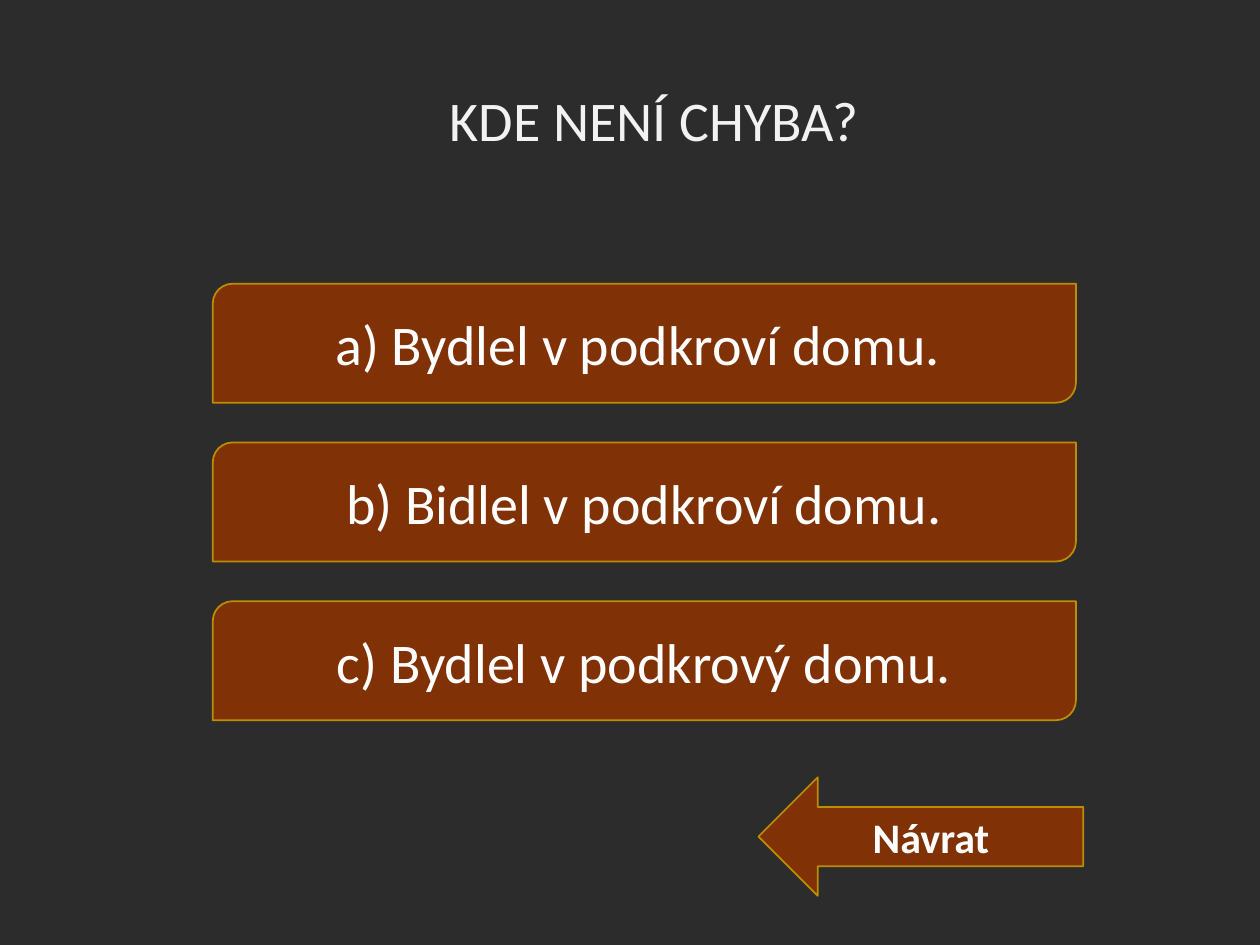
from pptx import Presentation
from pptx.dml.color import RGBColor
from pptx.enum.shapes import MSO_SHAPE as Shape
from pptx.enum.text import MSO_ANCHOR as Anchor, PP_ALIGN as Align
from pptx.util import Cm, Pt

BACKGROUND = RGBColor(0x2C, 0x2C, 0x2C)
TITLE = RGBColor(0xF2, 0xF2, 0xF2)
WHITE = RGBColor(0xFF, 0xFF, 0xFF)
BROWN = RGBColor(0x80, 0x31, 0x06)
GOLD = RGBColor(0xBD, 0x8E, 0x00)
FONT = "Calibri"

ANSWERS = [
    "a) Bydlel v podkroví domu. ",
    "b) Bidlel v podkroví domu.",
    "c) Bydlel v podkrový domu.",
]


def write(s, text, size, color, bold=False):
    tf = s.text_frame
    tf.word_wrap = True
    tf.vertical_anchor = Anchor.MIDDLE
    p = tf.paragraphs[0]
    p.alignment = Align.CENTER
    r = p.add_run()
    r.text = text
    r.font.name = FONT
    r.font.size = Pt(size)
    r.font.bold = bold
    r.font.color.rgb = color
    return p


def add_button(slide, kind, box, text, size, bold=False):
    s = slide.shapes.add_shape(kind, *box)
    s.shadow.inherit = False
    s.fill.solid()
    s.fill.fore_color.rgb = BROWN
    s.line.color.rgb = GOLD
    s.line.width = Pt(1)
    write(s, text, size, WHITE, bold)


def place_title(slide, box, text):
    s = slide.shapes.title
    s.left, s.top, s.width, s.height = box
    write(s, text, 32, TITLE).line_spacing = 0.85


def add_answers(slide, box, answers):
    """Stack the answers in the box, with gaps a third of a button high."""
    left, top, width, height = box
    n = len(answers)
    button = int(height / (n + (n - 1) / 3))
    pitch = button * 4 // 3
    for i, text in enumerate(answers):
        add_button(slide, Shape.ROUND_2_DIAG_RECTANGLE,
                   (left, top + i * pitch, width, button), text, 32)


def main():
    prs = Presentation()
    prs.slide_width, prs.slide_height = Cm(25.4), Cm(19.05)
    slide = prs.slides.add_slide(prs.slide_layouts[5])
    slide.background.fill.solid()
    slide.background.fill.fore_color.rgb = BACKGROUND

    place_title(slide, (Cm(2.9), Cm(0.91), Cm(20.83), Cm(3.18)),
                "KDE NENÍ CHYBA? ")
    add_answers(slide, (Cm(4.29), Cm(5.72), Cm(17.4), Cm(8.8)), ANSWERS)
    add_button(slide, Shape.LEFT_ARROW,
               (Cm(15.29), Cm(15.67), Cm(6.55), Cm(2.39)), "Návrat ", 24, True)
    prs.save("out.pptx")


if __name__ == "__main__":
    main()
